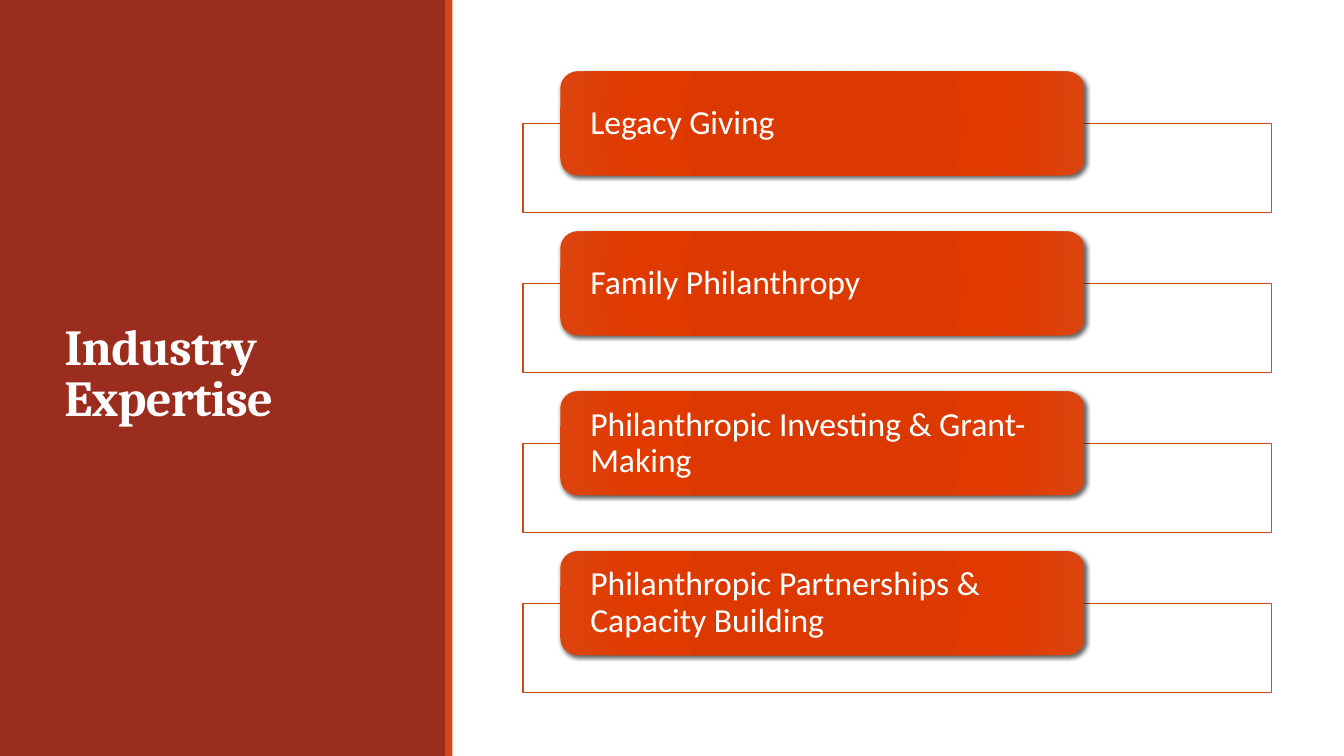
from pptx import Presentation
from pptx.dml.color import RGBColor
from pptx.enum.shapes import MSO_SHAPE
from pptx.enum.text import MSO_ANCHOR, PP_ALIGN
from pptx.oxml import parse_xml
from pptx.oxml.ns import nsdecls
from pptx.util import Cm, Pt

WHITE = RGBColor(0xFF, 0xFF, 0xFF)
BRICK = RGBColor(0x9B, 0x2D, 0x1F)
ORANGE = RGBColor(0xD3, 0x48, 0x17)
GLOW_STOPS = [
    (0, RGBColor(0xDA, 0x39, 0x00)),
    (34, RGBColor(0xDC, 0x39, 0x00)),
    (70, RGBColor(0xE0, 0x3A, 0x00)),
    (100, RGBColor(0xDC, 0x44, 0x0E)),
]
SERVICES = [
    "Legacy Giving",
    "Family Philanthropy",
    "Philanthropic Investing & Grant-Making",
    "Philanthropic Partnerships & Capacity Building",
]
FIRST_TOP, ROW_PITCH, FRAME_DROP = 1.8, 4.03, 1.32


def add_block(kind, left, top, width, height, color):
    shape = slide.shapes.add_shape(kind, Cm(left), Cm(top), Cm(width), Cm(height))
    shape.shadow.inherit = False
    shape.fill.solid()
    shape.fill.fore_color.rgb = color
    shape.line.fill.background()
    return shape


def format_text(shape, size, font_name, line_spacing):
    shape.text_frame.word_wrap = True
    shape.text_frame.vertical_anchor = MSO_ANCHOR.MIDDLE
    paragraph = shape.text_frame.paragraphs[0]
    paragraph.alignment = PP_ALIGN.LEFT
    paragraph.line_spacing = line_spacing
    font = paragraph.runs[0].font
    font.size = Pt(size)
    font.name = font_name
    font.color.rgb = WHITE
    return paragraph.runs[0]


presentation = Presentation()
presentation.slide_width, presentation.slide_height = Cm(33.87), Cm(19.05)
slide = presentation.slides.add_slide(presentation.slide_layouts[5])

# Side panel with its accent strip
add_block(MSO_SHAPE.RECTANGLE, 0, 0, 11.25, 19.05, BRICK)
add_block(MSO_SHAPE.RECTANGLE, 11.22, 0, 0.18, 19.05, ORANGE)

# Title, brought in front of the panel
title = slide.shapes.title
title.left, title.top, title.width, title.height = Cm(1.37), Cm(1.45), Cm(8.56), Cm(16.03)
title.text_frame.text = "Industry Expertise"
title_run = format_text(title, 36, "Cambria", 0.85)
title_run.font.bold = True
title_run.font._element.set("spc", "-50")
slide.shapes.element.append(title.element)

# Service rows: an outlined frame with a glowing label over it
stops = "".join(
    f'<a:gs pos="{position * 1000}"><a:srgbClr val="{color}"/></a:gs>'
    for position, color in GLOW_STOPS
)
for index, service in enumerate(SERVICES):
    top = FIRST_TOP + index * ROW_PITCH

    frame = add_block(MSO_SHAPE.RECTANGLE, 13.18, top + FRAME_DROP, 18.87, 2.24, WHITE)
    frame.line.color.rgb = ORANGE
    frame.line.width = Pt(1)
    frame_color = frame.fill._xPr.solidFill.srgbClr
    frame_color.append(parse_xml(f'<a:alpha {nsdecls("a")} val="90000"/>'))

    label = add_block(MSO_SHAPE.ROUNDED_RECTANGLE, 14.12, top, 13.21, 2.62, ORANGE)
    properties = label.element.spPr
    gradient = parse_xml(
        f'<a:gradFill {nsdecls("a")} rotWithShape="1"><a:gsLst>{stops}</a:gsLst>'
        '<a:path path="circle"><a:fillToRect l="100000" t="100000" r="100000" b="100000"/>'
        "</a:path></a:gradFill>"
    )
    properties.replace(properties.solidFill, gradient)
    shadow = parse_xml(
        f'<a:outerShdw {nsdecls("a")} blurRad="{Pt(3)}" dist="{Pt(2)}" dir="2700000" '
        'algn="ctr" rotWithShape="0"><a:srgbClr val="000000"><a:alpha val="60000"/>'
        "</a:srgbClr></a:outerShdw>"
    )
    properties.effectLst.append(shadow)

    text_frame = label.text_frame
    text_frame.text = service
    text_frame.margin_left = text_frame.margin_right = Cm(0.63)
    text_frame.margin_top = text_frame.margin_bottom = Cm(0.13)
    format_text(label, 24, "Calibri", 0.9)

presentation.save("out.pptx")
